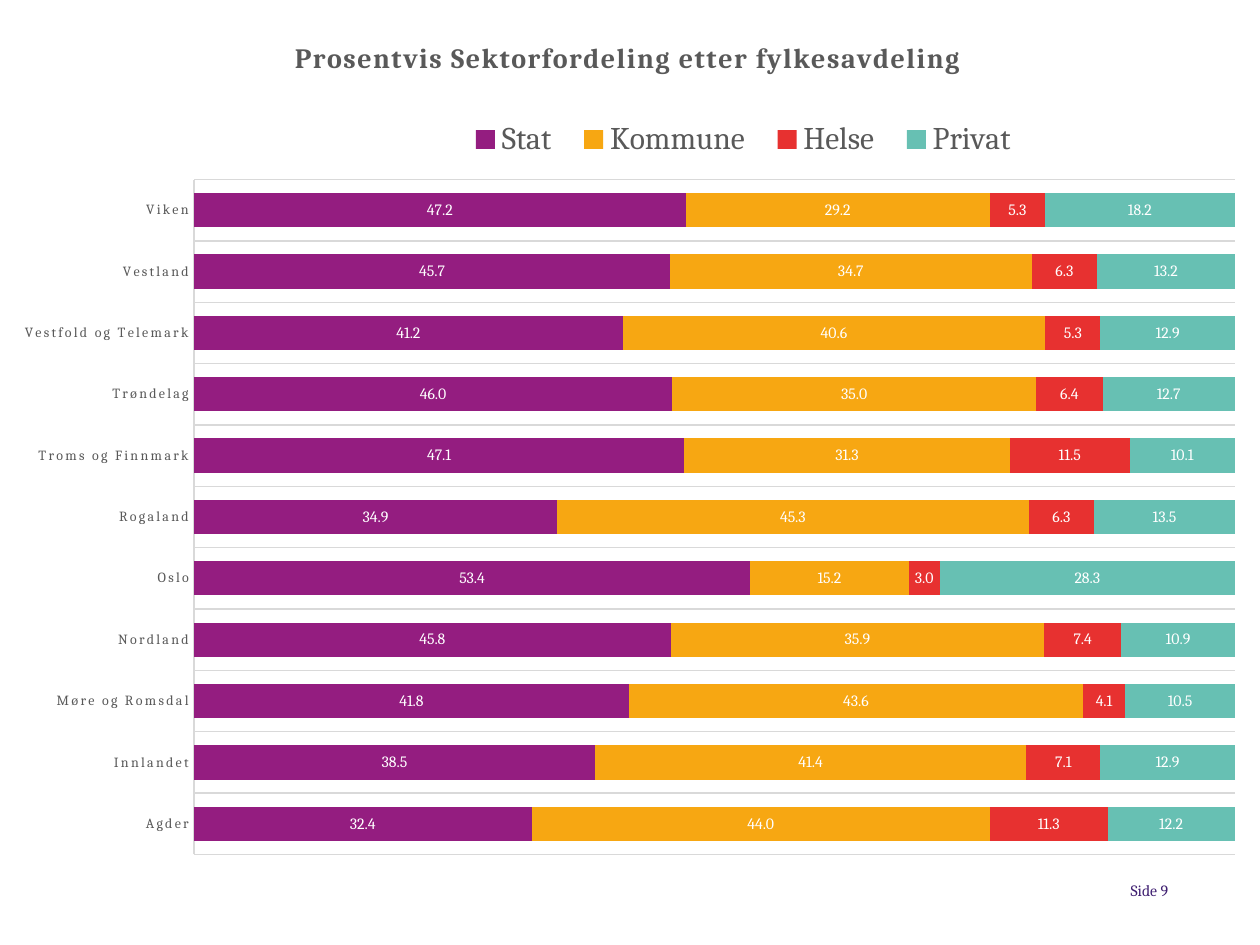
from lxml.etree import SubElement
from pptx import Presentation
from pptx.chart.data import CategoryChartData
from pptx.dml.color import RGBColor
from pptx.enum.chart import (XL_CHART_TYPE, XL_LABEL_POSITION,
                             XL_LEGEND_POSITION, XL_TICK_MARK)
from pptx.enum.text import MSO_ANCHOR, PP_ALIGN
from pptx.oxml import parse_xml
from pptx.oxml.ns import nsdecls, qn
from pptx.util import Cm, Pt

FONT = "Cambria"
GREY = RGBColor(0x59, 0x59, 0x59)
LIGHT_GREY = RGBColor(0xD9, 0xD9, 0xD9)
WHITE = RGBColor(0xFF, 0xFF, 0xFF)
BLACK = RGBColor(0x00, 0x00, 0x00)
INDIGO = RGBColor(0x3F, 0x1F, 0x71)
PURPLE = RGBColor(0x94, 0x1D, 0x80)
AMBER = RGBColor(0xF7, 0xA7, 0x12)
RED = RGBColor(0xE7, 0x31, 0x30)
TEAL = RGBColor(0x67, 0xC0, 0xB3)

COUNTIES = ["Agder", "Innlandet", "Møre og Romsdal", "Nordland", "Oslo",
            "Rogaland", "Troms og Finnmark", "Trøndelag",
            "Vestfold og Telemark", "Vestland", "Viken"]
SECTORS = [
    ("Stat", PURPLE,
     [32.4, 38.5, 41.8, 45.8, 53.4, 34.9, 47.1, 46.0, 41.2, 45.7, 47.2]),
    ("Kommune", AMBER,
     [44.0, 41.4, 43.6, 35.9, 15.2, 45.3, 31.3, 35.0, 40.6, 34.7, 29.2]),
    ("Helse", RED,
     [11.3, 7.1, 4.1, 7.4, 3.0, 6.3, 11.5, 6.4, 5.3, 6.3, 5.3]),
    ("Privat", TEAL,
     [12.2, 12.9, 10.5, 10.9, 28.3, 13.5, 10.1, 12.7, 12.9, 13.2, 18.2]),
]


def write_text(paragraph, text, *, size, color, bold=False, spacing=0,
               align=PP_ALIGN.LEFT):
    paragraph.alignment = align
    run = paragraph.add_run()
    run.text = text
    run.font.name = FONT
    run.font.size = Pt(size)
    run.font.bold = bold
    run.font.color.rgb = color
    run._r.get_or_add_rPr().set("spc", str(spacing))


def place(element, index, inner=False, **fractions):
    """Give a chart part a manual position, in fractions of the chart."""
    for old in element.findall(qn("c:layout")):
        element.remove(old)
    layout = parse_xml(f"<c:layout {nsdecls('c')}><c:manualLayout/></c:layout>")
    settings = {"layoutTarget": "inner"} if inner else {}
    settings.update(xMode="edge", yMode="edge", **fractions)
    for tag, value in settings.items():
        SubElement(layout[0], qn(f"c:{tag}")).set("val", str(value))
    element.insert(index, layout)


presentation = Presentation()
presentation.slide_width = Cm(25.4)
presentation.slide_height = Cm(19.05)
slide = presentation.slides.add_slide(presentation.slide_layouts[6])

# Page number
page_number = slide.shapes.add_textbox(Cm(17.83), Cm(17.75), Cm(5.72), Cm(0.38))
page_frame = page_number.text_frame
page_frame.word_wrap = True
page_frame.vertical_anchor = MSO_ANCHOR.MIDDLE
page_frame.margin_left = page_frame.margin_right = 0
page_frame.margin_top = page_frame.margin_bottom = 0
write_text(page_frame.paragraphs[0], "Side 9", size=9, color=INDIGO,
           align=PP_ALIGN.RIGHT)

# Sector shares by county
shares = CategoryChartData(number_format="0.0")
shares.categories = COUNTIES
for sector, _, values in SECTORS:
    shares.add_series(sector, values)
chart = slide.shapes.add_chart(XL_CHART_TYPE.BAR_STACKED_100, 0, 0, Cm(25.4),
                               Cm(17.58), shares).chart
chart.font.name = FONT
chart.font.size = Pt(10)
chart.font.color.rgb = BLACK

chart.has_title = True
write_text(chart.chart_title.text_frame.paragraphs[0],
           "Prosentvis Sektorfordeling etter fylkesavdeling",
           size=16, color=GREY, bold=True, spacing=100, align=PP_ALIGN.CENTER)
place(chart.chart_title._element, 1, x=0.23, y=0.04)

chart.has_legend = True
legend = chart.legend
legend.position = XL_LEGEND_POSITION.TOP
legend.include_in_layout = False
legend.font.name = FONT
legend.font.size = Pt(18)
legend.font.color.rgb = GREY
place(legend._element, 1, x=0.36, y=0.13, w=0.46, h=0.06)

plot = chart.plots[0]
plot.gap_width = 79
plot.overlap = 100
plot.vary_by_categories = False
place(chart._chartSpace.chart.plotArea, 0, inner=True,
      x=0.154, y=0.206, w=0.826, h=0.774)

for series, (_, color, _) in zip(plot.series, SECTORS):
    series.format.fill.solid()
    series.format.fill.fore_color.rgb = color
    labels = series.data_labels
    labels.show_value = True
    labels.position = XL_LABEL_POSITION.CENTER
    labels.number_format = "0.0"
    labels.number_format_is_linked = False
    labels.font.name = FONT
    labels.font.size = Pt(9)
    labels.font.color.rgb = WHITE

county_axis = chart.category_axis
county_axis.major_tick_mark = XL_TICK_MARK.NONE
county_axis.has_major_gridlines = True
for line in (county_axis.format.line, county_axis.major_gridlines.format.line):
    line.color.rgb = LIGHT_GREY
    line.width = Pt(0.75)
county_font = county_axis.tick_labels.font
county_font.name = FONT
county_font.size = Pt(8)
county_font.color.rgb = GREY
county_axis._element.find(f".//{qn('a:defRPr')}").set("spc", "120")

share_axis = chart.value_axis
share_axis.has_major_gridlines = False
share_axis.visible = False
share_axis.minimum_scale = 0
share_axis.maximum_scale = 1

presentation.save("out.pptx")
